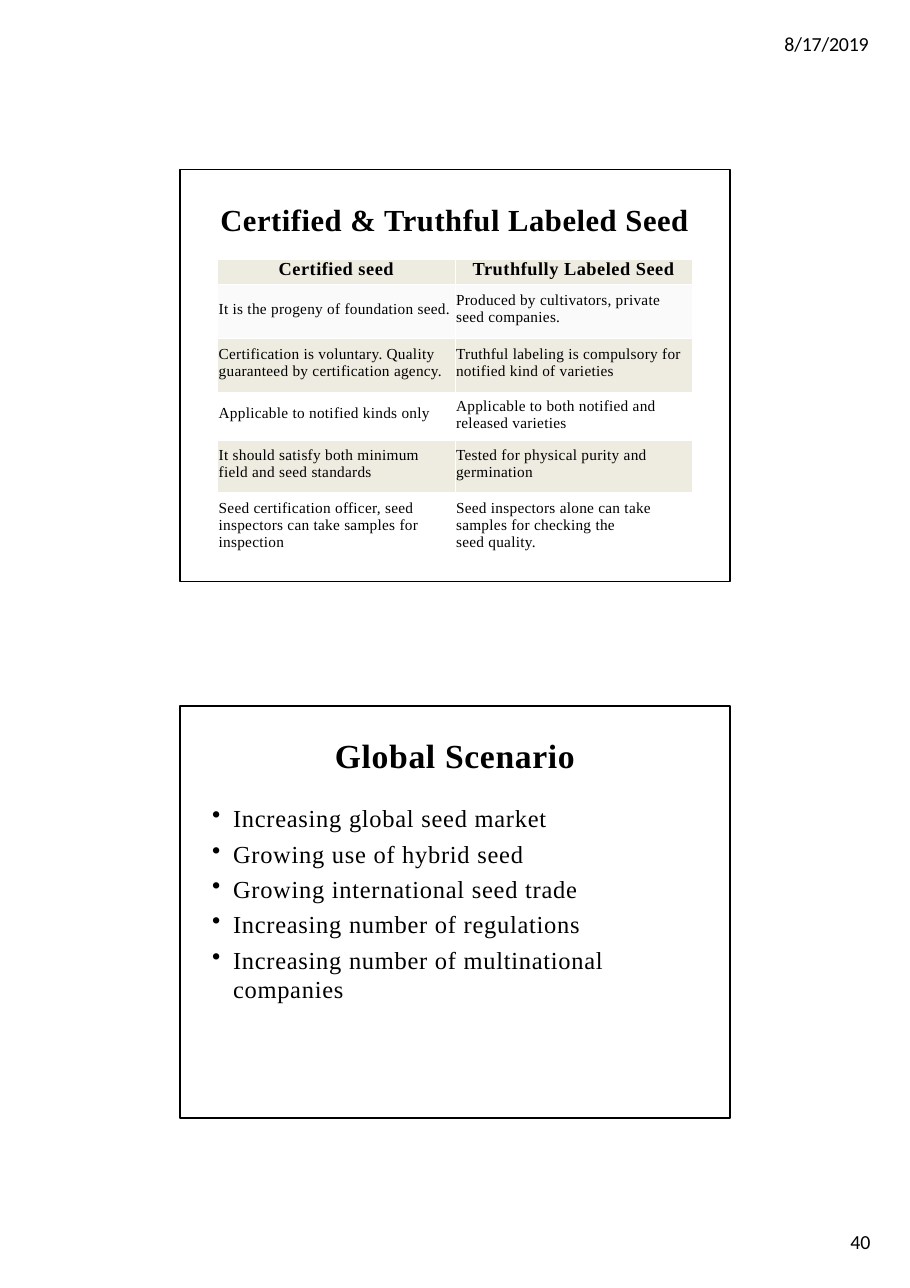
from lxml import etree
from pptx import Presentation, util as u
from pptx.dml.color import RGBColor
from pptx.enum import shapes, text
from pptx.oxml.ns import qn

# Content
DATE, PAGE_NUMBER = "8/17/2019", "40"
TABLE_TITLE = "Certified & Truthful Labeled Seed"
HEADINGS = ("Certified seed", "Truthfully Labeled Seed")
COMPARISON = [
    ("It is the progeny of foundation seed.",
     "Produced by cultivators, private\vseed companies."),
    ("Certification is voluntary. Quality\vguaranteed by certification agency.",
     "Truthful labeling is compulsory for\vnotified kind of varieties"),
    ("Applicable to notified kinds only",
     "Applicable to both notified and\vreleased varieties"),
    ("It should satisfy both minimum\vfield and seed standards",
     "Tested for physical purity and\vgermination"),
    ("Seed certification officer, seed\vinspectors can take samples for\vinspection",
     "Seed inspectors alone can take\vsamples for checking the\vseed quality."),
]
SCENARIO_TITLE = "Global Scenario"
SCENARIO = [
    "Increasing global seed market",
    "Growing use of hybrid seed",
    "Growing international seed trade",
    "Increasing number of regulations",
    "Increasing number of multinational\vcompanies",
]

# Layout in inches
PAGE_W, PAGE_H = 8.26, 11.69
FRAME_W, FRAME_H = 4.99, 3.74
FRAME_LEFT = (PAGE_W - FRAME_W) / 2
FRAME_TOPS = (1.54, 6.41)
TABLE_W = 4.31
ROW_HEIGHTS = (0.23, 0.49, 0.49, 0.44, 0.47, 0.65)
TOP_MARGINS = ((0, 0), (0.15, 0.07), (0.07, 0.07), (0.12, 0.05), (0.06, 0.06), (0.07, 0.07))
ROW_FILLS = ("EEECE1", "FAFAFA", "EEECE1", None, "EEECE1", None)
SERIF, SANS = "Times New Roman", "Calibri"


def color(value):
    return RGBColor.from_string(value)


def style(paragraph, size, font=SERIF, bold=False, spacing=0.0):
    for run in paragraph.runs:
        run.font.name, run.font.size, run.font.bold = font, u.Pt(size), bold
        run.font.color.rgb = color("000000")
        run.font._element.set("spc", str(round(spacing * 100)))


def set_margins(box, top=0.0):
    box.margin_left = box.margin_right = box.margin_bottom = 0
    box.margin_top = u.Inches(top)


def add_label(slide, words, left, top, width, height, size, **look):
    box = slide.shapes.add_textbox(*map(u.Inches, (left, top, width, height)))
    frame = box.text_frame
    set_margins(frame, 0.01)
    frame.word_wrap = False
    frame.text = words
    style(frame.paragraphs[0], size, **look)
    return frame.paragraphs[0]


def add_frame(slide, top):
    shape = slide.shapes.add_shape(
        shapes.MSO_SHAPE.RECTANGLE, *map(u.Inches, (FRAME_LEFT, top, FRAME_W, FRAME_H)))
    shape.shadow.inherit = False
    shape.fill.background()
    shape.line.color.rgb = color("000000")
    shape.line.width = u.Pt(0.96)
    return shape


def set_borders(cell, value="FFFFFF", width=0.5):
    properties = cell._tc.get_or_add_tcPr()
    for position, side in enumerate(("lnL", "lnR", "lnT", "lnB")):
        line = etree.Element(qn("a:" + side), w=str(u.Pt(width)))
        fill = etree.SubElement(line, qn("a:solidFill"))
        etree.SubElement(fill, qn("a:srgbClr"), val=value)
        properties.insert(position, line)


def add_bullet(paragraph, margin=0.48, hang=0.19):
    properties = paragraph._p.get_or_add_pPr()
    properties.set("marL", str(u.Inches(margin)))
    properties.set("indent", str(-u.Inches(hang)))
    etree.SubElement(properties, qn("a:buChar"), char="•")


def add_comparison(slide, left, top):
    rows = [HEADINGS] + COMPARISON
    graphic = slide.shapes.add_table(
        len(rows), 2, *map(u.Inches, (left, top, TABLE_W, sum(ROW_HEIGHTS))))
    table = graphic.table
    table.first_row = table.horz_banding = False
    for column in table.columns:
        column.width = u.Inches(TABLE_W / 2)
    for i, words in enumerate(rows):
        table.rows[i].height = u.Inches(ROW_HEIGHTS[i])
        for j, entry in enumerate(words):
            cell = table.cell(i, j)
            set_margins(cell, TOP_MARGINS[i][j])
            if ROW_FILLS[i]:
                cell.fill.solid()
                cell.fill.fore_color.rgb = color(ROW_FILLS[i])
            else:
                cell.fill.background()
            set_borders(cell)
            cell.text_frame.text = entry
            paragraph = cell.text_frame.paragraphs[0]
            if i == 0:
                paragraph.alignment = text.PP_ALIGN.CENTER
                style(paragraph, 12, bold=True, spacing=0.35)
            else:
                cell.margin_left = u.Inches(0.01)
                style(paragraph, 10, spacing=0.2)


def add_scenario(shape):
    frame = shape.text_frame
    set_margins(frame, 0.26)
    frame.word_wrap = True
    frame.vertical_anchor = text.MSO_ANCHOR.TOP
    frame.text = SCENARIO_TITLE
    title = frame.paragraphs[0]
    title.alignment = text.PP_ALIGN.CENTER
    style(title, 22, bold=True, spacing=0.45)
    for i, words in enumerate(SCENARIO):
        paragraph = frame.add_paragraph()
        paragraph.text = words
        paragraph.alignment = text.PP_ALIGN.LEFT
        paragraph.space_before = u.Pt(3.9 if i else 18.4)
        add_bullet(paragraph)
        style(paragraph, 16, spacing=0.5)


def main():
    presentation = Presentation()
    presentation.slide_width = u.Inches(PAGE_W)
    presentation.slide_height = u.Inches(PAGE_H)
    slide = presentation.slides.add_slide(presentation.slide_layouts[6])

    # Page header
    add_label(slide, DATE, 7.12, 0.28, 0.81, 0.24, 13, font=SANS, spacing=-0.1)

    # Upper panel: seed comparison
    add_label(slide, TABLE_TITLE, 2, 1.81, 4.28, 0.36, 20, bold=True, spacing=0.35)
    add_comparison(slide, (PAGE_W - TABLE_W) / 2, 2.35)
    add_frame(slide, FRAME_TOPS[0])

    # Lower panel: global scenario
    add_scenario(add_frame(slide, FRAME_TOPS[1]))

    # Page number
    number = add_label(slide, PAGE_NUMBER, 7.72, 11.18, 0.23, 0.21, 13, font=SANS, spacing=-0.1)
    number.line_spacing = u.Pt(13.3)

    presentation.save("out.pptx")


if __name__ == "__main__":
    main()
